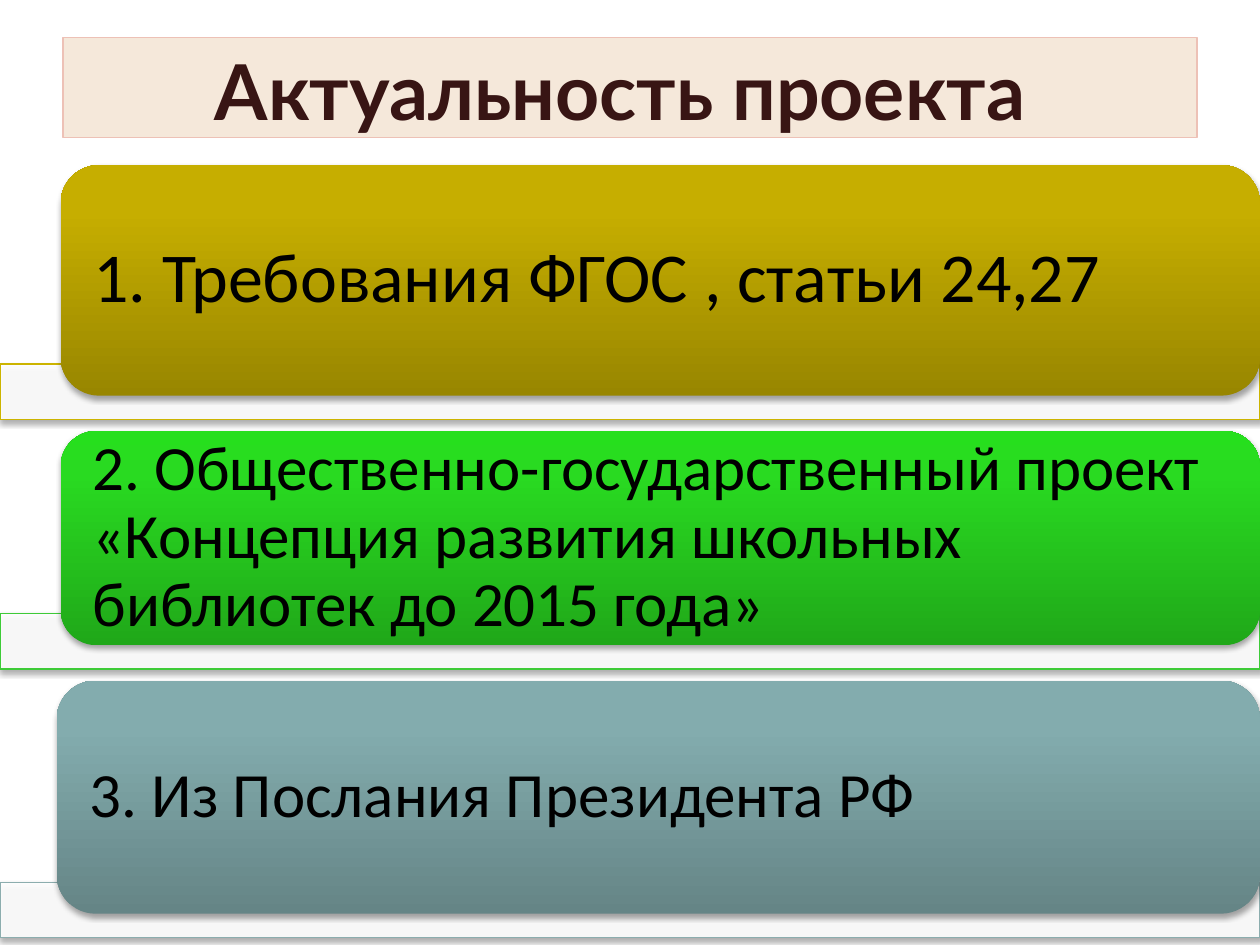
from lxml import etree
from pptx import Presentation
from pptx import util as u
from pptx.dml.color import RGBColor
from pptx.enum import shapes, text
from pptx.oxml import parse_xml
from pptx.oxml.ns import qn

NS = 'xmlns:a="http://schemas.openxmlformats.org/drawingml/2006/main"'
W, H = 720, 540


def rgb(code):
    return RGBColor.from_string(code)


def write(s, content, font="Calibri", size=36, color="000000", bold=False,
          align=text.PP_ALIGN.LEFT, anchor=text.MSO_ANCHOR.MIDDLE,
          inset=(7.2, 3.6), spacing=None):
    tf = s.text_frame
    tf.word_wrap = True
    tf.vertical_anchor = anchor
    tf.margin_left = tf.margin_right = u.Pt(inset[0])
    tf.margin_top = tf.margin_bottom = u.Pt(inset[1])
    p = tf.paragraphs[0]
    p.alignment = align
    p.line_spacing = spacing
    r = p.add_run()
    r.text = content
    r.font.name, r.font.size, r.font.bold = font, u.Pt(size), bold
    r.font.color.rgb = rgb(color)


class Deck:
    shadow = dict(color="000000", alpha=35, blur=3.1, dist=1.8)
    line_width = 0.75

    def __init__(self, prs):
        self.slide = prs.slides.add_slide(prs.slide_layouts[6])

    def shape(self, kind, x, y, w, h):
        s = self.slide.shapes.add_shape(kind, *map(u.Pt, (x, y, w, h)))
        s.shadow.inherit = False
        return s

    def panel(self, x, y, w, h, fill, line, alpha):
        s = self.shape(shapes.MSO_SHAPE.RECTANGLE, x, y, w, h)
        s.fill.solid()
        s.fill.fore_color.rgb = rgb(fill)
        clr = s._element.spPr.find(qn("a:solidFill"))[0]
        etree.SubElement(clr, qn("a:alpha"), val=str(alpha * 1000))
        s.line.color.rgb = rgb(line)
        s.line.width = u.Pt(self.line_width)
        return s

    def card(self, x, y, w, h, stops):
        s = self.shape(shapes.MSO_SHAPE.ROUNDED_RECTANGLE, x, y, w, h)
        s.line.fill.background()
        gs = "".join(f'<a:gs pos="{pos * 1000}"><a:srgbClr val="{c}"/></a:gs>'
                     for pos, c in zip((0, 80, 100), stops))
        s._element.spPr.find(qn("a:prstGeom")).addnext(parse_xml(
            f'<a:gradFill {NS} rotWithShape="1"><a:gsLst>{gs}</a:gsLst>'
            '<a:lin ang="16200000" scaled="0"/></a:gradFill>'))
        return s

    def cast_shadow(self, s):
        d = self.shadow
        s._element.spPr.find(qn("a:effectLst")).append(parse_xml(
            f'<a:outerShdw {NS} blurRad="{u.Pt(d["blur"])}" '
            f'dist="{u.Pt(d["dist"])}" dir="5400000" rotWithShape="0">'
            f'<a:srgbClr val="{d["color"]}">'
            f'<a:alpha val="{d["alpha"] * 1000}"/></a:srgbClr></a:outerShdw>'))


def main():
    prs = Presentation()
    prs.slide_width, prs.slide_height = u.Pt(W), u.Pt(H)
    deck = Deck(prs)

    # Title
    title = deck.panel(36, 21.6, 648, 56.9, "EDD3B6", "EDC1B6", alpha=50)
    write(title, "Актуальность проекта ", font="Lato", size=44,
          color="381514", bold=True, align=text.PP_ALIGN.CENTER,
          anchor=text.MSO_ANCHOR.TOP)

    # Reasons: each card overlaps the bar below it
    reasons = [
        ("1. Требования ФГОС , статьи 24,27", 40, 34.6, 131.8, "CCB400",
         ("988600", "C6AE00", "C7AF00")),
        ("2. Общественно-государственный проект «Концепция развития "
         "школьных библиотек до 2015 года»", 36, 34.6, 122.4, "3ECB38",
         ("20A819", "29DA21", "26DF1D")),
        ("3. Из Послания Президента РФ", 36, 32.4, 133.2, "8CADAE",
         ("658586", "83ACAE", "82AEAF")),
    ]
    bar_h, overlap, gap = 31.7, 18, 6.5
    y = 94.3
    for content, size, x, h, line, stops in reasons:
        bar_y = y + h - overlap
        bar = deck.panel(0, bar_y, W, bar_h, "FFFFFF", line, alpha=90)
        card = deck.card(x, y, W - x, h, stops)
        for s in (bar, card):
            deck.cast_shadow(s)
        write(card, content, size=size, inset=(12.4, 0), spacing=0.9)
        y = bar_y + bar_h + gap

    prs.save("out.pptx")


if __name__ == "__main__":
    main()
